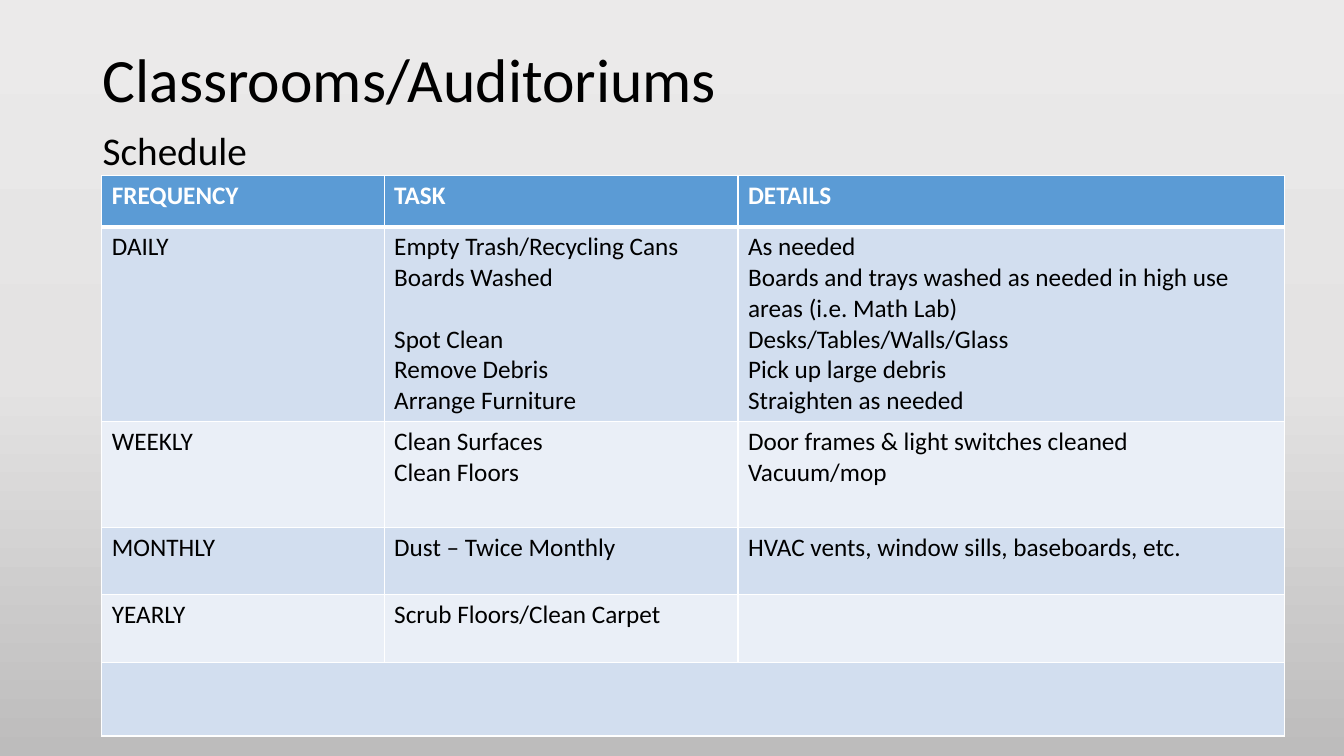
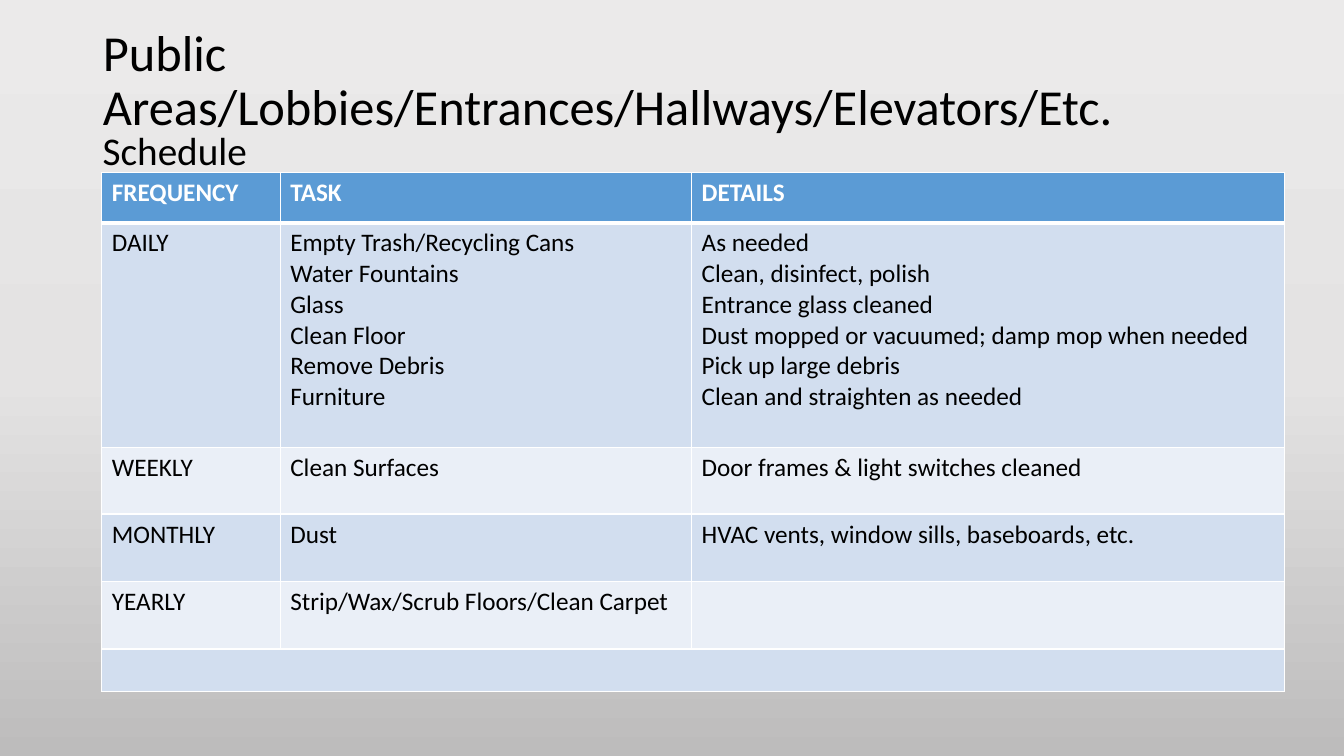
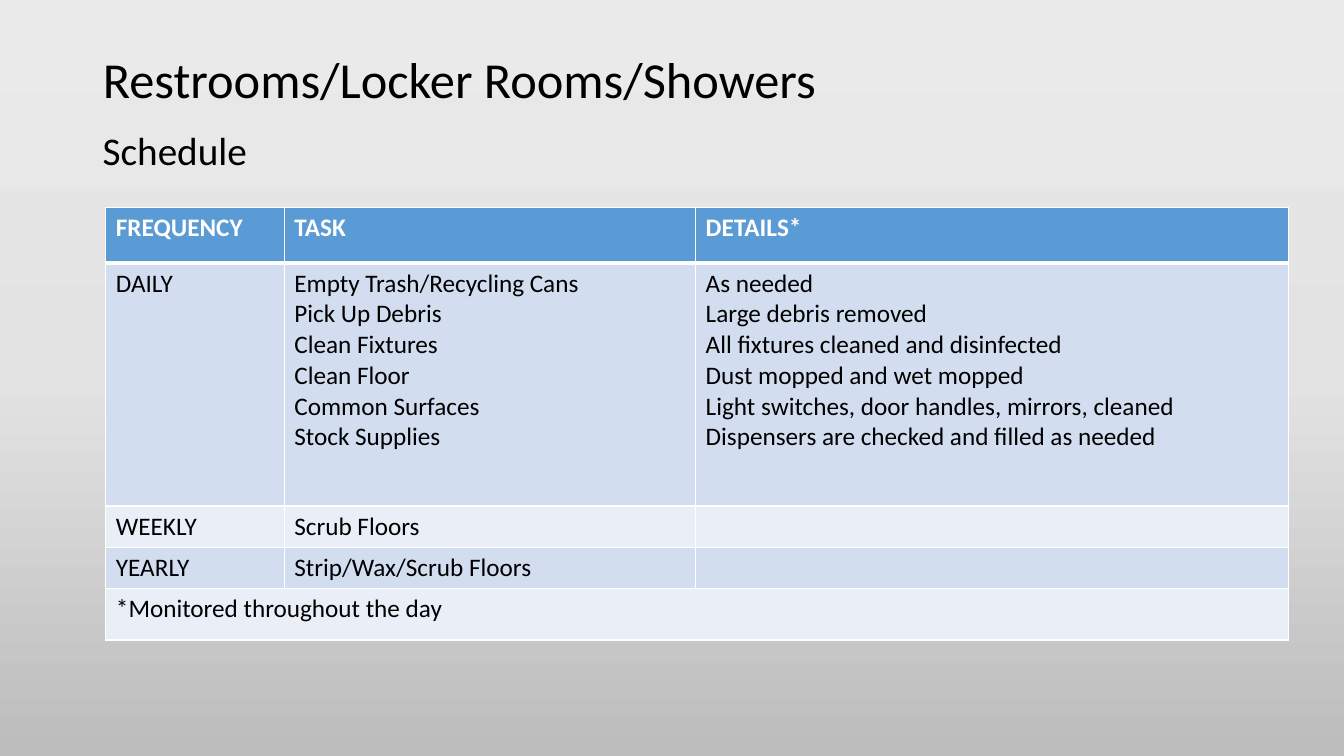
from lxml import etree
from pptx import Presentation
from pptx.dml.color import RGBColor
from pptx.enum.text import MSO_ANCHOR, MSO_AUTO_SIZE, PP_ALIGN
from pptx.oxml.ns import qn
from pptx.util import Inches, Pt

LEFT = PP_ALIGN.LEFT
TOP, MIDDLE = MSO_ANCHOR.TOP, MSO_ANCHOR.MIDDLE
NO_AUTOFIT = MSO_AUTO_SIZE.NONE

FONT = "Calibri"
COLORS = {
    "text": "000000",
    "white": "FFFFFF",
    "header": "5B9BD5",
    "dark_band": "D2DEEF",
    "light_band": "EAEFF7",
}
BACKGROUND_STOPS = [(0, "EBEAEA"), (50, "E4E3E3"), (100, "BDBCBC")]
TITLE_BOX = (0.92, 0.09, 11.5, 1.45)
SUBTITLE_BOX = (0.92, 1.26, 11.5, 0.6)
TITLE_ONLY_LAYOUT = 5
SKIPPED_LINE = 22  # points, one line of table text

# Each row is a height and its cells; a cell is a list of lines.
# A line given as a pair carries the space before it.
# A row with a single cell spans the whole table.
SCHEDULES = [
    {
        "title": "Classrooms/Auditoriums",
        "title_size": 44,
        "corner": (1.01, 1.74),
        "columns": [2.8, 3.51, 5.42],
        "rows": [
            (0.51, [["FREQUENCY"], ["TASK"], ["DETAILS"]]),
            (1.93, [
                ["DAILY"],
                ["Empty Trash/Recycling Cans", "Boards Washed",
                 ("Spot Clean", SKIPPED_LINE), "Remove Debris",
                 "Arrange Furniture"],
                ["As needed",
                 "Boards and trays washed as needed in high use areas "
                 "(i.e. Math Lab)",
                 "Desks/Tables/Walls/Glass", "Pick up large debris",
                 "Straighten as needed"],
            ]),
            (1.05, [
                ["WEEKLY"],
                ["Clean Surfaces", "Clean Floors"],
                ["Door frames & light switches cleaned", "Vacuum/mop"],
            ]),
            (0.67, [["MONTHLY"], ["Dust – Twice Monthly"],
                    ["HVAC vents, window sills, baseboards, etc."]]),
            (0.67, [["YEARLY"], ["Scrub Floors/Clean Carpet"], []]),
            (0.73, [[]]),
        ],
    },
    {
        "title": "Public Areas/Lobbies/Entrances/Hallways/Elevators/Etc.",
        "title_size": 36,
        "corner": (1.01, 1.71),
        "columns": [1.77, 4.08, 5.88],
        "rows": [
            (0.5, [["FREQUENCY"], ["TASK"], ["DETAILS"]]),
            (2.23, [
                ["DAILY"],
                ["Empty Trash/Recycling Cans", "Water Fountains", "Glass",
                 "Clean Floor", "Remove Debris", "Furniture"],
                ["As needed", "Clean, disinfect, polish",
                 "Entrance glass cleaned",
                 "Dust mopped or vacuumed; damp mop when needed",
                 "Pick up large debris", "Clean and straighten as needed"],
            ]),
            (0.66, [["WEEKLY"], ["Clean Surfaces"],
                    ["Door frames & light switches cleaned"]]),
            (0.67, [["MONTHLY"], ["Dust"],
                    ["HVAC vents, window sills, baseboards, etc."]]),
            (0.67, [["YEARLY"], ["Strip/Wax/Scrub Floors/Clean Carpet"], []]),
            (0.42, [[]]),
        ],
    },
    {
        "title": "Restrooms/Locker Rooms/Showers",
        "title_size": 36,
        "corner": (1.05, 2.06),
        "columns": [1.77, 4.08, 5.88],
        "rows": [
            (0.55, [["FREQUENCY"], ["TASK"], ["DETAILS*"]]),
            (2.41, [
                ["DAILY"],
                ["Empty Trash/Recycling Cans", "Pick Up Debris",
                 "Clean Fixtures", "Clean Floor", "Common Surfaces",
                 "Stock Supplies"],
                ["As needed", "Large debris removed",
                 "All fixtures cleaned and disinfected",
                 "Dust mopped and wet mopped",
                 "Light switches, door handles, mirrors, cleaned",
                 "Dispensers are checked and filled as needed"],
            ]),
            (0.41, [["WEEKLY"], ["Scrub Floors"], []]),
            (0.41, [["YEARLY"], ["Strip/Wax/Scrub Floors"], []]),
            (0.51, [["*Monitored throughout the day"]]),
        ],
    },
]


def write_text(text_frame, lines, size=18, color="text", bold=False,
               line_spacing=1.0, anchor=TOP):
    """Fill a text frame with one paragraph for each line."""
    text_frame.word_wrap = True
    text_frame.vertical_anchor = anchor
    for index, line in enumerate(lines):
        text, space_before = line if isinstance(line, tuple) else (line, 0)
        paragraph = (text_frame.add_paragraph() if index
                     else text_frame.paragraphs[0])
        paragraph.alignment = LEFT
        paragraph.line_spacing = line_spacing
        paragraph.space_before = Pt(space_before)
        run = paragraph.add_run()
        run.text = text
        run.font.name = FONT
        run.font.size = Pt(size)
        run.font.bold = bold
        run.font.color.rgb = RGBColor.from_string(COLORS[color])


def set_background(master):
    """Give every slide the same top-to-bottom gradient."""
    fill = master.background.fill
    fill.gradient()
    fill.gradient_angle = 270
    stops = master.element.find(".//" + qn("a:gsLst"))
    for stop in list(stops):
        stops.remove(stop)
    for position, color in BACKGROUND_STOPS:
        stop = etree.SubElement(stops, qn("a:gs"), pos=str(position * 1000))
        etree.SubElement(stop, qn("a:srgbClr"), val=color)


def set_borders(cell, top=1, bottom=1):
    """Draw white cell borders, with widths in points."""
    properties = cell._tc.get_or_add_tcPr()
    widths = {"a:lnL": 1, "a:lnR": 1, "a:lnT": top, "a:lnB": bottom}
    for index, (tag, width) in enumerate(widths.items()):
        line = etree.Element(qn(tag), w=str(Pt(width)))
        fill = etree.SubElement(line, qn("a:solidFill"))
        etree.SubElement(fill, qn("a:srgbClr"), val=COLORS["white"])
        properties.insert(index, line)


def add_headings(slide, title, title_size):
    """Place the title and the line below it."""
    shape = slide.shapes.title
    shape.left, shape.top, shape.width, shape.height = map(Inches, TITLE_BOX)
    shape.text_frame.auto_size = NO_AUTOFIT
    write_text(shape.text_frame, [title], size=title_size,
               line_spacing=0.9, anchor=MIDDLE)
    subtitle = slide.shapes.add_textbox(*map(Inches, SUBTITLE_BOX))
    write_text(subtitle.text_frame, ["Schedule"], size=28, line_spacing=0.9)


def add_schedule_table(slide, corner, columns, rows):
    """Place a banded table with its top left at the corner."""
    width = sum(columns)
    height = sum(row_height for row_height, _ in rows)
    table = slide.shapes.add_table(
        len(rows), len(columns),
        *map(Inches, (*corner, width, height))).table
    table.first_row = table.horz_banding = False
    for column, column_width in zip(table.columns, columns):
        column.width = Inches(column_width)

    for row_index, (row_height, cells) in enumerate(rows):
        table.rows[row_index].height = Inches(row_height)
        is_header = row_index == 0
        band = "dark_band" if row_index % 2 else "light_band"
        for column_index in range(len(columns)):
            cell = table.cell(row_index, column_index)
            cell.fill.solid()
            cell.fill.fore_color.rgb = RGBColor.from_string(
                COLORS["header" if is_header else band])
            set_borders(cell, top=3 if row_index == 1 else 1,
                        bottom=3 if is_header else 1)
        if len(cells) == 1:
            table.cell(row_index, 0).merge(
                table.cell(row_index, len(columns) - 1))
        for column_index, lines in enumerate(cells):
            write_text(table.cell(row_index, column_index).text_frame, lines,
                       color="white" if is_header else "text",
                       bold=is_header)


def add_schedule_slide(presentation, schedule):
    slide = presentation.slides.add_slide(
        presentation.slide_layouts[TITLE_ONLY_LAYOUT])
    add_schedule_table(slide, schedule["corner"], schedule["columns"],
                       schedule["rows"])
    add_headings(slide, schedule["title"], schedule["title_size"])


def main():
    presentation = Presentation()
    presentation.slide_width = Inches(13.33)
    presentation.slide_height = Inches(7.5)
    set_background(presentation.slide_master)
    for schedule in SCHEDULES:
        add_schedule_slide(presentation, schedule)
    presentation.save("out.pptx")


if __name__ == "__main__":
    main()
